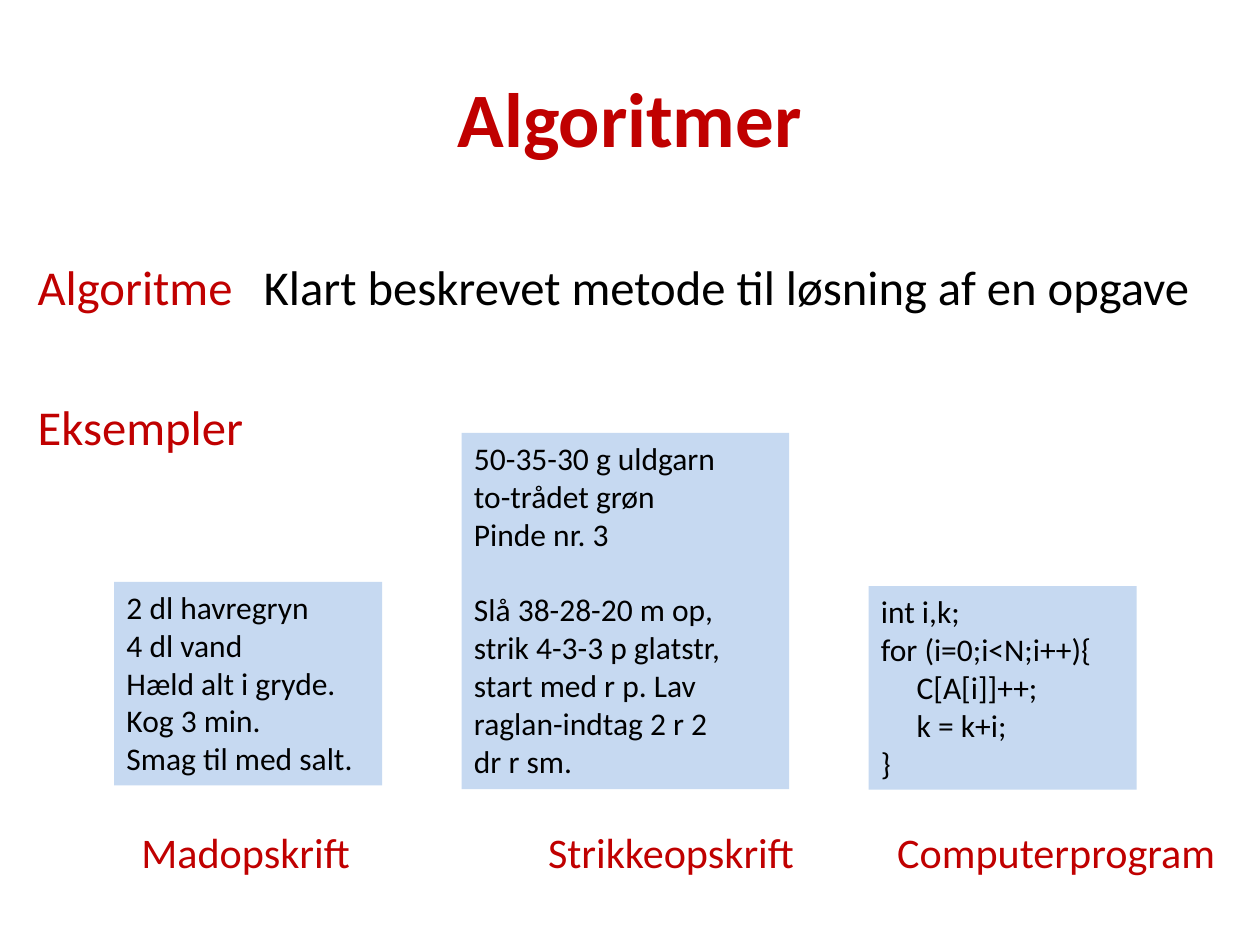
from dataclasses import dataclass

from lxml import etree
from pptx import Presentation
from pptx.dml.color import RGBColor
from pptx.enum.shapes import MSO_SHAPE
from pptx.enum.text import MSO_ANCHOR, PP_ALIGN
from pptx.oxml.ns import qn
from pptx.util import Pt

RECT = MSO_SHAPE.RECTANGLE
TOP, MIDDLE = MSO_ANCHOR.TOP, MSO_ANCHOR.MIDDLE
LEFT, CENTER = PP_ALIGN.LEFT, PP_ALIGN.CENTER


@dataclass(frozen=True)
class Theme:
    """Colours, font and type sizes of the slide."""
    font: str = "Calibri"
    accent: RGBColor = RGBColor(0xC0, 0x00, 0x00)
    ink: RGBColor = RGBColor(0x00, 0x00, 0x00)
    card: RGBColor = RGBColor(0xC6, 0xD9, 0xF1)
    title: float = 44
    body: float = 27.8
    label: float = 24.1
    code: float = 18


THEME = Theme()
CODE_INDENT = 20.4
BLANK_LINE = 21.6

RECIPE = ["2 dl havregryn", "4 dl vand", "Hæld alt i gryde.", "Kog 3 min.",
          "Smag til med salt."]
KNITTING = ["50-35-30 g uldgarn", "to-trådet grøn", "Pinde nr. 3", "",
            "Slå 38-28-20 m op,", "strik 4-3-3 p glatstr,",
            "start med r p. Lav", "raglan-indtag 2 r 2", "dr r sm."]
PROGRAM = ["int i,k;", "for (i=0;i<N;i++){", "\tC[A[i]]++;", "\tk = k+i;", "}"]
CARDS = [
    ((65.2, 332.5, 153.2, 116.3), RECIPE),
    ((263.8, 247.4, 187.2, 203.6), KNITTING),
    ((496.3, 335, 153.2, 116.3), PROGRAM),
]


def style(p, size, color, bold=False):
    """Set the font of a whole paragraph."""
    f = p.font
    f.name, f.size, f.bold = THEME.font, Pt(size), bold
    f.color.rgb = color


def set_tabs(p, stops):
    """Give a paragraph left tab stops at the given points."""
    tabs = etree.Element(qn("a:tabLst"))
    for stop in stops:
        etree.SubElement(tabs, qn("a:tab"), pos=str(Pt(stop)), algn="l")
    p._p.get_or_add_pPr().find(qn("a:defRPr")).addprevious(tabs)


def add_text_box(s, box):
    """Add a wrapping text box and return its text frame."""
    tf = s.shapes.add_textbox(*map(Pt, box)).text_frame
    tf.word_wrap = True
    return tf


def add_title(s, box):
    """Place the centred title."""
    tf = add_text_box(s, box)
    tf.vertical_anchor = MIDDLE
    p = tf.paragraphs[0]
    p.text, p.alignment = "Algoritmer", CENTER
    style(p, THEME.title, THEME.accent, bold=True)


def add_body(s, box):
    """Place the definition, the heading and the row of example labels."""
    tf = add_text_box(s, box)
    p = tf.paragraphs[0]
    style(p, THEME.body, THEME.accent)
    set_tabs(p, [129.2])
    p.add_run().text = "Algoritme\t"
    r = p.add_run()
    r.text = "Klart beskrevet metode til løsning af en opgave"
    r.font.color.rgb = THEME.ink

    p = tf.add_paragraph()
    p.text, p.space_before = "Eksempler", Pt(46.5)
    style(p, THEME.body, THEME.accent)

    p = tf.add_paragraph()
    p.text = "\tMadopskrift\tStrikkeopskrift\tComputerprogram"
    p.space_before = Pt(212)
    style(p, THEME.label, THEME.accent)
    set_tabs(p, [59.3, 291.7, 491.2])


def add_card(s, box, lines):
    """Place a filled card; an empty line adds space, a tab indents."""
    sp = s.shapes.add_shape(RECT, *map(Pt, box))
    sp.shadow.inherit = False
    sp.fill.solid()
    sp.fill.fore_color.rgb = THEME.card
    sp.line.fill.background()
    tf = sp.text_frame
    tf.word_wrap, tf.vertical_anchor = True, TOP
    p, gap = tf.paragraphs[0], 0
    for i, line in enumerate(lines):
        if not line:
            gap = BLANK_LINE
            continue
        if i:
            p = tf.add_paragraph()
        p.text, p.alignment = line.lstrip("\t"), LEFT
        p.space_before, gap = Pt(gap), 0
        style(p, THEME.code, THEME.ink)
        if line.startswith("\t"):
            p._p.get_or_add_pPr().set("marL", str(Pt(CODE_INDENT)))


def main():
    """Build the slide and save it."""
    prs = Presentation()
    prs.slide_width, prs.slide_height = Pt(720), Pt(540)
    s = prs.slides.add_slide(prs.slide_layouts[6])
    add_title(s, (36, 21.6, 648, 90))
    add_body(s, (14.4, 143.5, 692, 353.5))
    for box, lines in CARDS:
        add_card(s, box, lines)
    prs.save("out.pptx")


if __name__ == "__main__":
    main()
